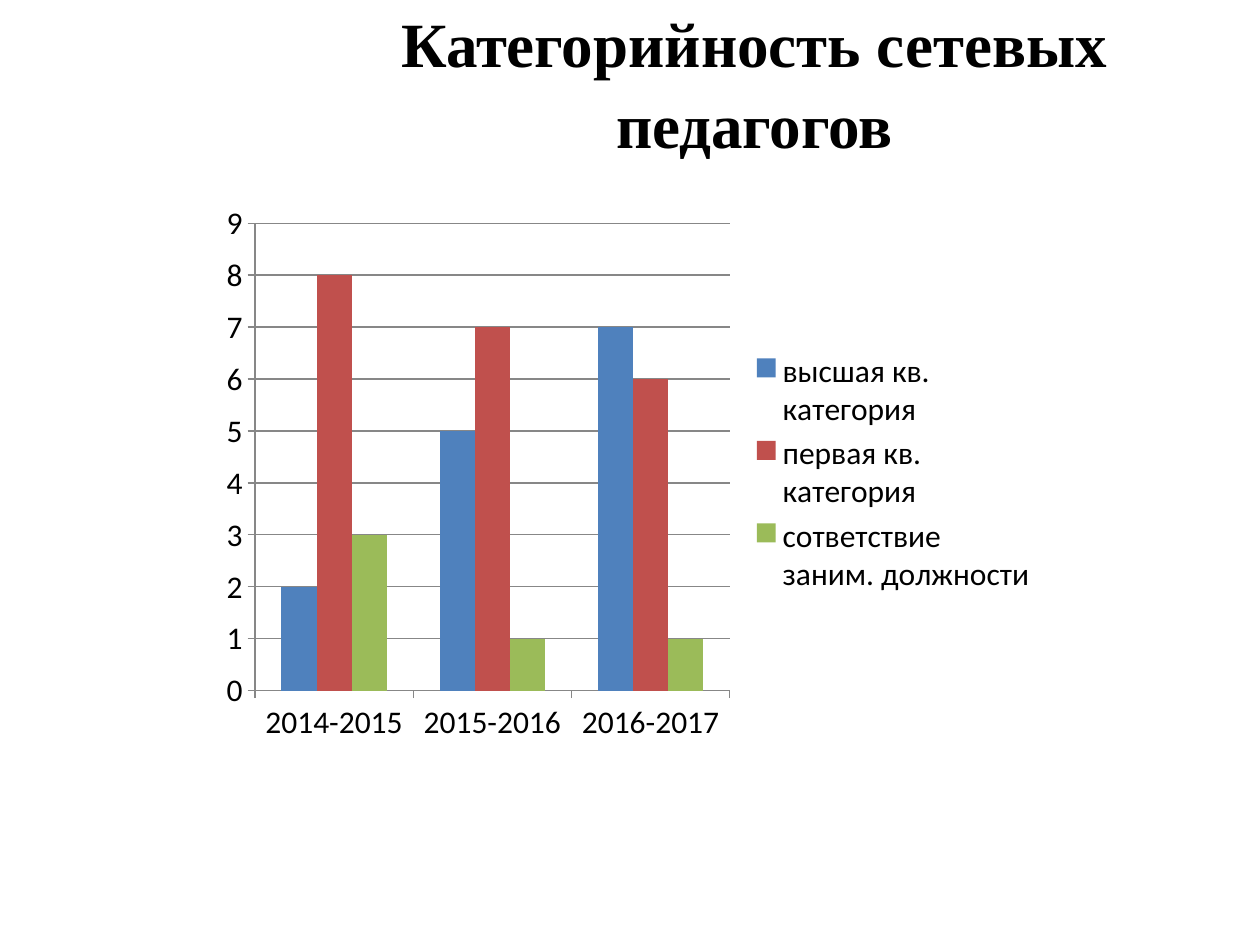
from pptx import Presentation
from pptx import util as u
from pptx.chart.data import CategoryChartData
from pptx.dml.color import RGBColor
from pptx.enum import chart as charts, text

TITLE = "Категорийность сетевых педагогов"
YEARS = ["2014-2015", "2015-2016", "2016-2017"]
SERIES = [
    ("высшая кв. категория", (2, 5, 7), "4F81BD"),
    ("первая кв. категория", (8, 7, 6), "C0504D"),
    ("сответствие заним. должности", (3, 1, 1), "9BBB59"),
]
THEME = {
    "title_font": "Times New Roman",
    "title_size": 36,
    "chart_font": "Calibri",
    "chart_size": 18,
    "ink": "000000",
    "axis": "878787",
}
TITLE_FRAME = (6.71, 0.33, 16.99, 2.59)
CHART_FRAME = (4.23, 3.89, 16.94, 11.28)


def style_font(font, kind):
    font.name = THEME[f"{kind}_font"]
    font.size = u.Pt(THEME[f"{kind}_size"])
    font.color.rgb = RGBColor.from_string(THEME["ink"])


def style_line(line):
    line.color.rgb = RGBColor.from_string(THEME["axis"])
    line.width = u.Pt(0.75)


def add_title(page):
    box = page.shapes.add_textbox(*map(u.Cm, TITLE_FRAME))
    frame = box.text_frame
    frame.word_wrap = True
    frame.vertical_anchor = text.MSO_ANCHOR.MIDDLE
    para = frame.paragraphs[0]
    para.text = TITLE
    para.alignment = text.PP_ALIGN.CENTER
    para.line_spacing = 1.06
    style_font(para.font, "title")
    para.font.bold = True


def add_category_chart(page):
    data = CategoryChartData()
    data.categories = YEARS
    for name, values, _ in SERIES:
        data.add_series(name, values)
    chart = page.shapes.add_chart(
        charts.XL_CHART_TYPE.COLUMN_CLUSTERED, *map(u.Cm, CHART_FRAME), data
    ).chart
    style_font(chart.font, "chart")
    chart.has_title = False
    chart.has_legend = True
    chart.legend.position = charts.XL_LEGEND_POSITION.RIGHT
    chart.legend.include_in_layout = False

    plot = chart.plots[0]
    plot.gap_width = 150
    plot.overlap = 0
    plot.vary_by_categories = False
    for series, (_, _, color) in zip(plot.series, SERIES):
        series.format.fill.solid()
        series.format.fill.fore_color.rgb = RGBColor.from_string(color)

    for axis in (chart.category_axis, chart.value_axis):
        axis.major_tick_mark = charts.XL_TICK_MARK.OUTSIDE
        axis.minor_tick_mark = charts.XL_TICK_MARK.NONE
        style_line(axis.format.line)
    scale = chart.value_axis
    scale.minimum_scale, scale.maximum_scale, scale.major_unit = 0, 9, 1
    scale.has_major_gridlines = True
    style_line(scale.major_gridlines.format.line)


def main():
    deck = Presentation()
    deck.slide_width, deck.slide_height = u.Cm(25.4), u.Cm(19.05)
    page = deck.slides.add_slide(deck.slide_layouts[6])
    add_title(page)
    add_category_chart(page)
    deck.save("out.pptx")


if __name__ == "__main__":
    main()
